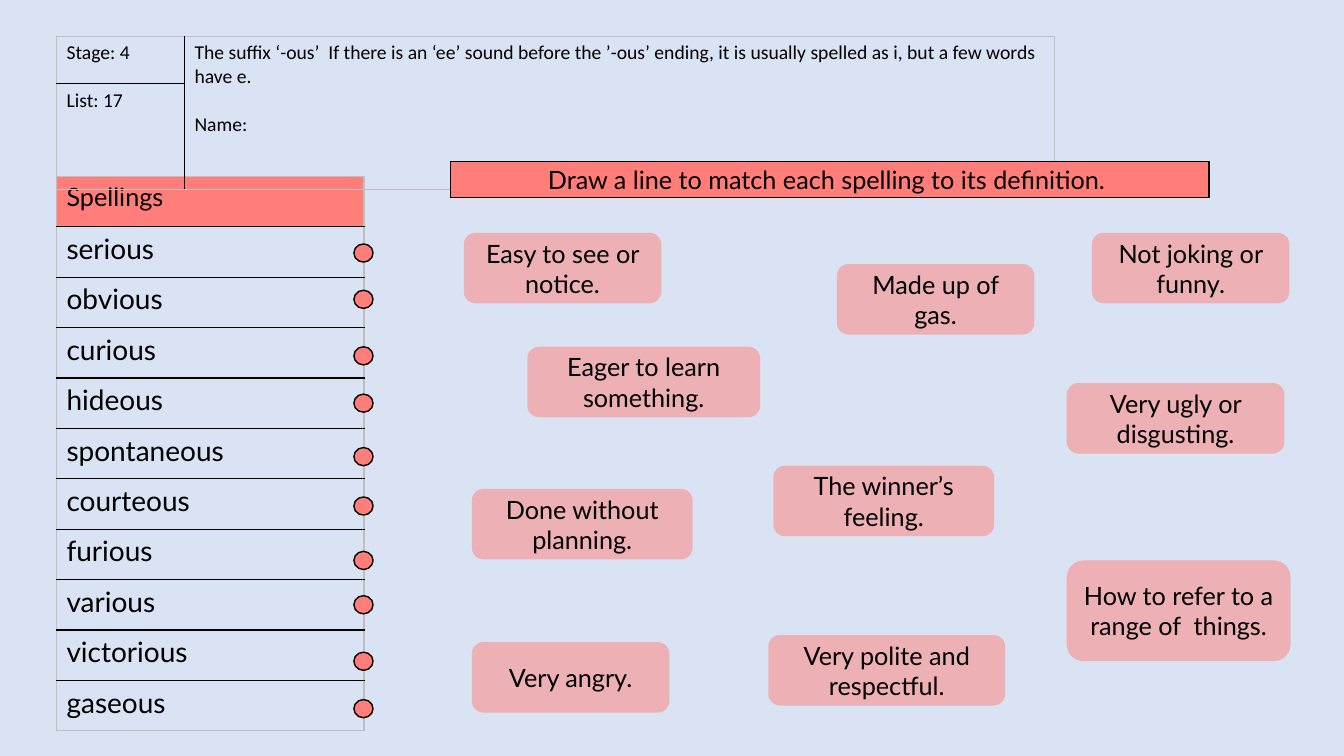
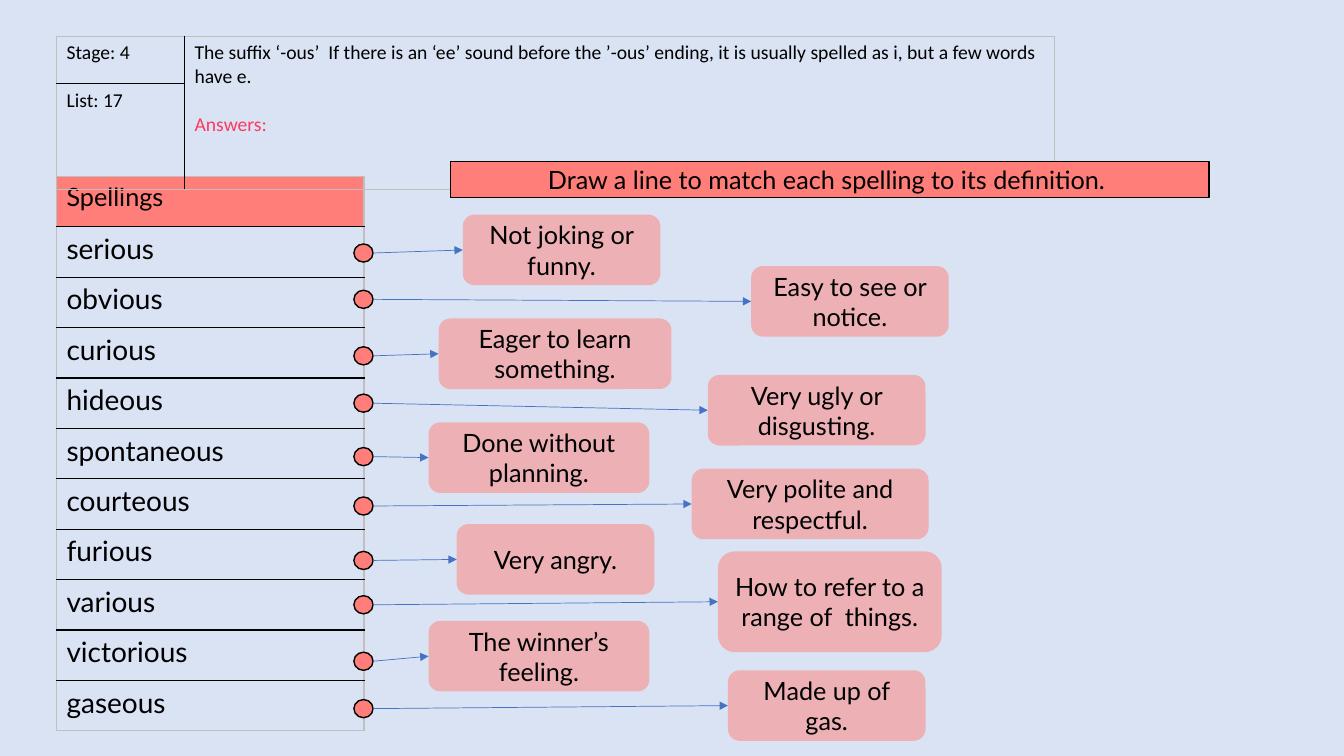
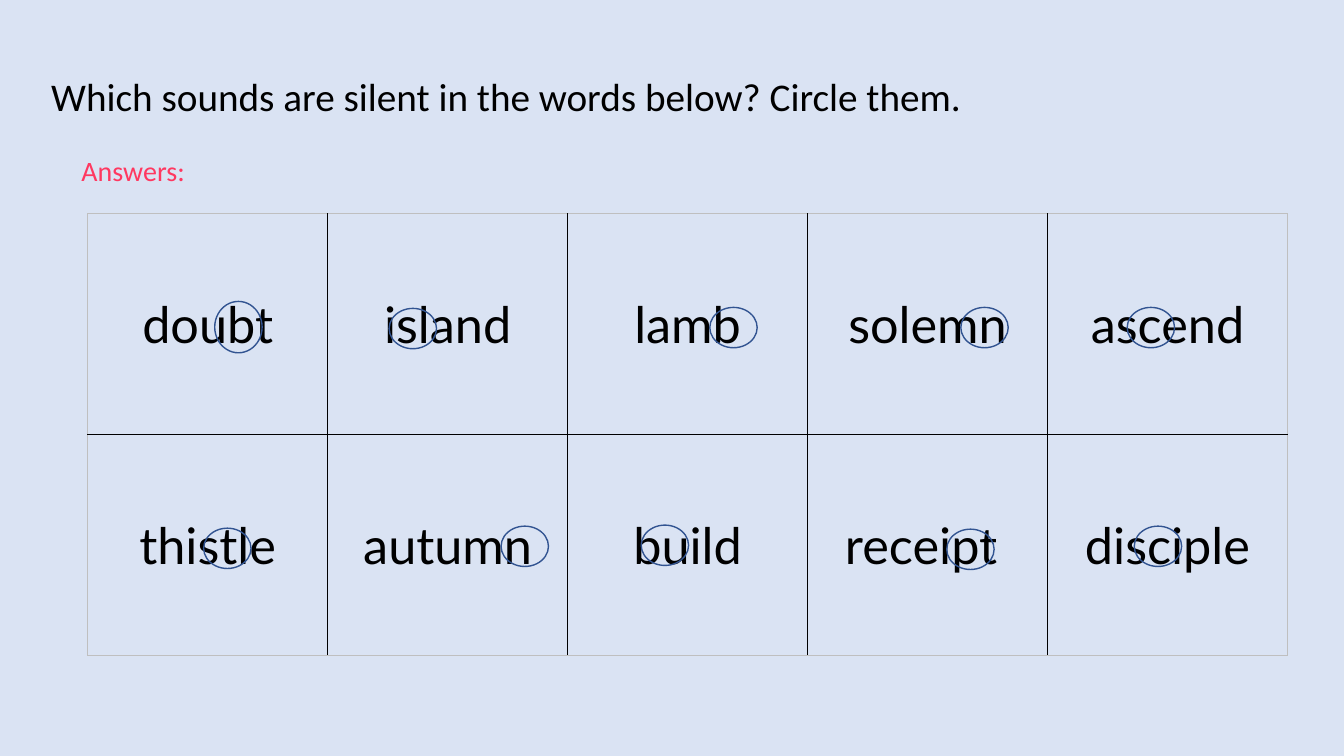
from dataclasses import dataclass

from lxml import etree
from pptx import Presentation, util as u
from pptx.dml.color import RGBColor
from pptx.enum import shapes, text
from pptx.oxml import ns


@dataclass(frozen=True)
class Theme:
    page: str = "DAE3F3"
    ink: str = "000000"
    coral: str = "FF7E79"
    answer: str = "FF3860"
    arrow: str = "4472C4"
    ring: str = "325491"
    frame: str = "BFBFBF"
    head_font: str = "Calibri"
    body_font: str = "Lato"
    small: int = 14
    body: int = 18
    large: int = 20
    title: int = 28
    word: int = 36


THEME = Theme()
PLAIN_TABLE = "{2D5ABB26-0587-4C30-8999-92F81FD0307C}"
RULE = ("The suffix ‘-ous’  If there is an ‘ee’ sound before the ’-ous’ ending, "
        "it is usually spelled as i, but a few words have e.")
TASK = "Draw a line to match each spelling to its definition. "
QUESTION = "Which sounds are silent in the words below? Circle them."

# spelling, dot top, definition, box size, puzzle position, answer position
SPELLINGS = [
    ("serious", 2.42, "Not joking or funny.", (1.96, 0.7), (10.83, 2.31), (4.59, 2.13)),
    ("obvious", 2.88, "Easy to see or notice.", (1.96, 0.7), (4.6, 2.31), (7.45, 2.64)),
    ("curious", 3.44, "Eager to learn something.", (2.31, 0.7), (5.23, 3.44), (4.35, 3.16)),
    ("hideous", 3.91, "Very ugly or disgusting.", (2.16, 0.7), (10.58, 3.8), (7.02, 3.72)),
    ("spontaneous", 4.44, "Done without planning.", (2.19, 0.7), (4.68, 4.85), (4.25, 4.19)),
    ("courteous", 4.93, "Very polite and respectful.", (2.35, 0.7), (7.62, 6.3), (6.86, 4.65)),
    ("furious", 5.47, "Very angry.", (1.96, 0.7), (4.68, 6.37), (4.53, 5.2)),
    ("various", 5.91, "How to refer to a range of  things.", (2.22, 1), (10.58, 5.56), (7.12, 5.47)),
    ("victorious", 6.47, "The winner’s feeling.", (2.19, 0.7), (7.67, 4.62), (4.25, 6.16)),
    ("gaseous", 6.94, "Made up of gas.", (1.96, 0.7), (8.3, 2.62), (7.22, 6.65)),
]
SILENT_WORDS = [
    [("doubt", 2.13, 2.99, 0.51), ("island", 3.86, 3.06, 0.4), ("lamb", 7.04, 3.05, 0.4),
     ("solemn", 9.53, 3.05, 0.4), ("ascend", 11.18, 3.05, 0.4)],
    [("thistle", 2.02, 5.24, 0.4), ("autumn", 4.97, 5.22, 0.4), ("build", 6.36, 5.21, 0.4),
     ("receipt ", 9.39, 5.25, 0.4), ("disciple", 11.25, 5.22, 0.4)],
]


def inches(*lengths):
    return [u.Inches(length) for length in lengths]


def write(frame, content, size=THEME.body, font=THEME.body_font, color=THEME.ink,
          align=text.PP_ALIGN.LEFT, before=0, spacing=None, new=False):
    para = frame.add_paragraph() if new else frame.paragraphs[0]
    para.alignment = align
    para.space_before = u.Pt(before)
    if spacing:
        para.line_spacing = spacing
    span = para.add_run()
    span.text = content
    span.font.size = u.Pt(size)
    span.font.name = font
    span.font.color.rgb = RGBColor.from_string(color)


def add_label(page, place, content, **style):
    frame = page.shapes.add_textbox(*inches(*place)).text_frame
    frame.word_wrap = True
    frame.vertical_anchor = text.MSO_ANCHOR.MIDDLE
    write(frame, content, **style)


def add_box(page, kind, place, fill=None, line=None, alpha=None, content=None):
    box = page.shapes.add_shape(kind, *inches(*place))
    box.shadow.inherit = False
    if fill:
        box.fill.solid()
        box.fill.fore_color.rgb = RGBColor.from_string(fill)
    else:
        box.fill.background()
    if alpha:
        color = box.fill._xPr.find(".//" + ns.qn("a:srgbClr"))
        etree.SubElement(color, ns.qn("a:alpha"), val=str(alpha * 1000))
    if line:
        box.line.color.rgb = RGBColor.from_string(line)
        box.line.width = u.Pt(1)
    else:
        box.line.fill.background()
    if content:
        box.text_frame.word_wrap = True
        box.text_frame.vertical_anchor = text.MSO_ANCHOR.MIDDLE
        write(box.text_frame, content, align=text.PP_ALIGN.CENTER)
    return box


def add_arrow(page, start, box):
    arrow = page.shapes.add_connector(shapes.MSO_CONNECTOR.STRAIGHT, *inches(*start, *start))
    arrow.end_connect(box, 1)
    arrow.line.color.rgb = RGBColor.from_string(THEME.arrow)
    arrow.line.width = u.Pt(0.5)
    etree.SubElement(arrow.line._get_or_add_ln(), ns.qn("a:tailEnd"), type="triangle")
    etree.SubElement(arrow._element.spPr, ns.qn("a:effectLst"))


def add_border(cell, side, color):
    line = etree.SubElement(cell._tc.get_or_add_tcPr(), ns.qn("a:ln" + side), w=str(u.Pt(1)))
    fill = etree.SubElement(line, ns.qn("a:solidFill"))
    etree.SubElement(fill, ns.qn("a:srgbClr"), val=color)


def add_grid(page, left, top, widths, heights, merge=None):
    table = page.shapes.add_table(len(heights), len(widths),
                                  *inches(left, top, sum(widths), sum(heights))).table
    table.first_row = table.horz_banding = False
    table._tbl.tblPr.find(ns.qn("a:tableStyleId")).text = PLAIN_TABLE
    for column, width in zip(table.columns, widths):
        column.width = u.Inches(width)
    for row, height in zip(table.rows, heights):
        row.height = u.Inches(height)
    if merge:
        first, last = merge
        table.cell(*first).merge(table.cell(*last))
    for r in range(len(heights)):
        for c in range(len(widths)):
            cell = table.cell(r, c)
            outer = {"L": c == 0, "R": c + cell.span_width == len(widths),
                     "T": r == 0, "B": r + cell.span_height == len(heights)}
            if cell.is_spanned:
                outer = {"L": False, "R": True, "B": True}
            for side, is_outer in outer.items():
                add_border(cell, side, THEME.frame if is_outer else THEME.ink)
            cell.fill.background()
    return table


def add_page(deck):
    page = deck.slides.add_slide(deck.slide_layouts[6])
    page.background.fill.solid()
    page.background.fill.fore_color.rgb = RGBColor.from_string(THEME.page)
    return page


def build_matching(deck, label, label_color, answers):
    page = add_page(deck)
    spellings = add_grid(page, 0.56, 1.75, [3.05], [0.5] * (len(SPELLINGS) + 1))
    heading = spellings.cell(0, 0)
    heading.fill.solid()
    heading.fill.fore_color.rgb = RGBColor.from_string(THEME.coral)
    write(heading.text_frame, "Spellings")

    header = add_grid(page, 0.56, 0.36, [1.27, 8.63], [0.47, 1.05], merge=((0, 1), (1, 1)))
    style = dict(size=THEME.small, font=THEME.head_font)
    write(header.cell(0, 0).text_frame, "Stage: 4", **style)
    write(header.cell(1, 0).text_frame, "List: 17", **style)
    rule = header.cell(0, 1).text_frame
    write(rule, RULE, **style)
    write(rule, label, color=label_color, before=17, new=True, **style)

    for row, (word, dot_top, meaning, size, puzzle, answer) in enumerate(SPELLINGS, 1):
        write(spellings.cell(row, 0).text_frame, word, size=THEME.large)
        add_box(page, shapes.MSO_SHAPE.OVAL, (3.51, dot_top, 0.19, 0.18), THEME.coral, THEME.ink)
        place = answer if answers else puzzle
        box = add_box(page, shapes.MSO_SHAPE.ROUNDED_RECTANGLE, (*place, *size),
                      THEME.coral, alpha=50, content=meaning)
        if answers:
            add_arrow(page, (3.7, dot_top + 0.09), box)
    add_box(page, shapes.MSO_SHAPE.RECTANGLE, (4.47, 1.6, 7.52, 0.36),
            THEME.coral, THEME.ink, content=TASK)


def build_silent(deck):
    page = add_page(deck)
    add_label(page, (0.41, 0.26, 10.08, 1.45), QUESTION,
              size=THEME.title, font=THEME.head_font, spacing=0.9)
    table = add_grid(page, 0.87, 2.12, [2.38] * 5, [2.19] * 2)
    for r, words in enumerate(SILENT_WORDS):
        for c, (word, left, top, height) in enumerate(words):
            cell = table.cell(r, c)
            cell.vertical_anchor = text.MSO_ANCHOR.MIDDLE
            write(cell.text_frame, word, size=THEME.word, align=text.PP_ALIGN.CENTER)
            add_box(page, shapes.MSO_SHAPE.OVAL, (left, top, 0.47, height), line=THEME.ring)
    add_label(page, (0.71, 1.47, 1.47, 0.44), "Answers:",
              size=THEME.large, font=THEME.head_font, color=THEME.answer)


def main():
    deck = Presentation()
    deck.slide_width, deck.slide_height = inches(13.33, 7.5)
    build_matching(deck, "Name:", THEME.ink, answers=False)
    build_matching(deck, "Answers:", THEME.answer, answers=True)
    build_silent(deck)
    deck.save("out.pptx")


if __name__ == "__main__":
    main()
